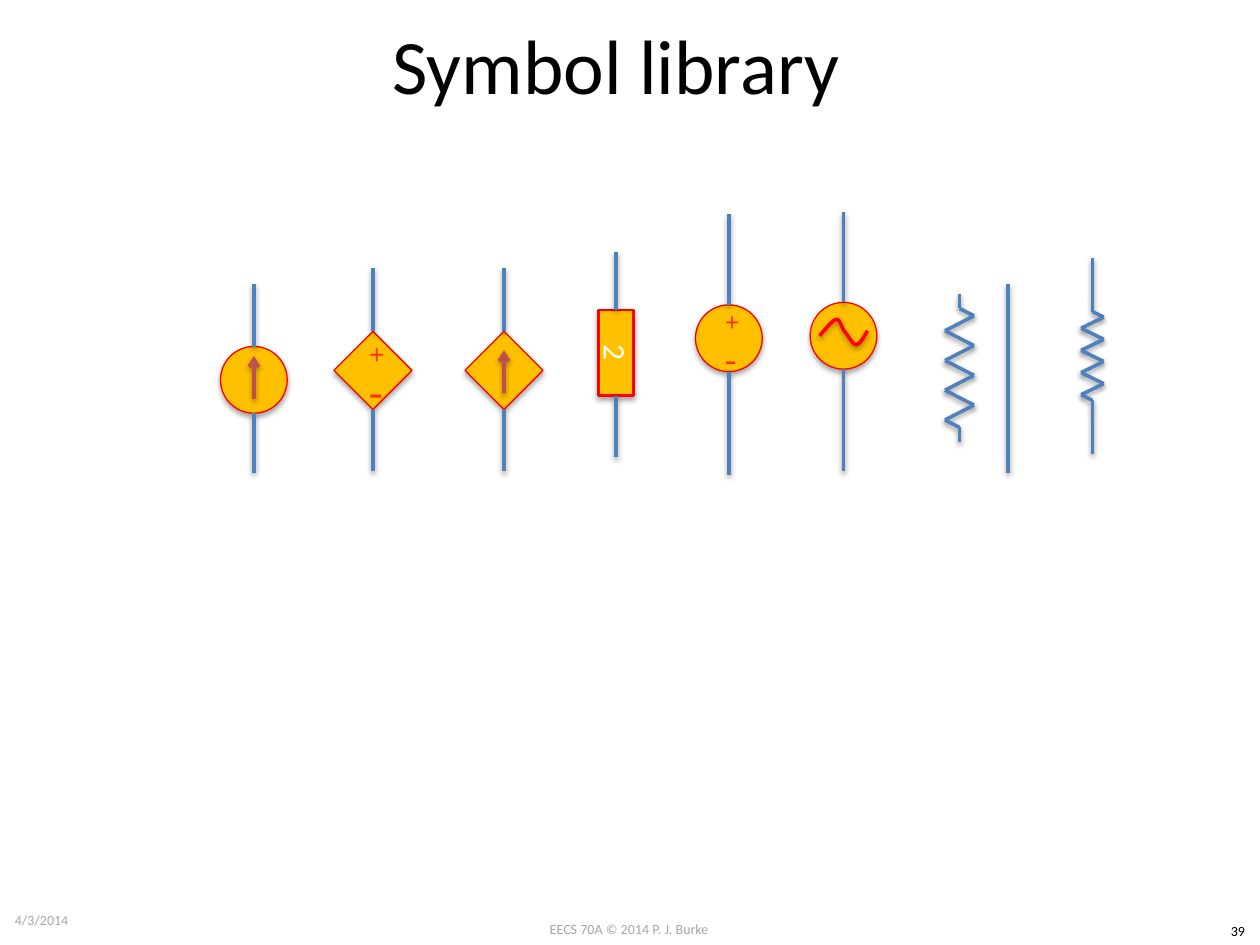
from itertools import pairwise
from math import sqrt

from lxml import etree
from pptx import Presentation
from pptx.dml.color import RGBColor
from pptx.enum import shapes, text
from pptx.oxml.ns import qn
from pptx.util import Inches, Pt

GOLD, RED, SIGN, BLUE, BRICK = "FFC000", "FF0000", "FF3300", "4F81BD", "C0504D"
BLACK, GREY, WHITE = "000000", "A6A6A6", "FFFFFF"
CENTER, LEFT = text.PP_ALIGN.CENTER, text.PP_ALIGN.LEFT
TOP, MIDDLE = text.MSO_ANCHOR.TOP, text.MSO_ANCHOR.MIDDLE


def color(value):
    """Turn a hex string into a colour."""
    return RGBColor.from_string(value)


def cast_shadow(item, distance, opacity):
    """Give a finished shape or connector a soft shadow straight below it."""
    effects = etree.SubElement(item._element.spPr, qn("a:effectLst"))
    shadow = etree.SubElement(
        effects, qn("a:outerShdw"), blurRad=str(Pt(3.1)), dist=str(Pt(distance)),
        dir="5400000", rotWithShape="0")
    tone = etree.SubElement(shadow, qn("a:srgbClr"), val=BLACK)
    etree.SubElement(tone, qn("a:alpha"), val=str(opacity * 1000))


def write(shape, words, size, ink, font="Calibri", align=CENTER, anchor=MIDDLE, bold=False):
    """Put one formatted paragraph into a shape."""
    frame = shape.text_frame
    frame.word_wrap = True
    frame.vertical_anchor = anchor
    para = frame.paragraphs[0]
    para.text, para.alignment = words, align
    para.font.name, para.font.size, para.font.bold = font, Pt(size), bold
    para.font.color.rgb = color(ink)


def label(parent, box, words, size, ink, **style):
    """Add a text box at the given box."""
    write(parent.shapes.add_textbox(*map(Inches, box)), words, size, ink, **style)


def wire(parent, start, end, ink=BLUE, joined=None, site=0):
    """Draw a straight line, optionally joined to a body at its start."""
    line = parent.shapes.add_connector(
        shapes.MSO_CONNECTOR.STRAIGHT, *map(Inches, (*start, *end)))
    if joined is not None:
        line.begin_connect(joined, site)
        line.begin_x, line.begin_y = map(Inches, start)
    line.line.color.rgb = color(ink)
    line.line.width = Pt(2)
    cast_shadow(line, 1.6, 38)
    return line


def body(parent, kind, box, rotation=0, weight=0.75):
    """Draw the gold body of a component."""
    shape = parent.shapes.add_shape(kind, *map(Inches, box))
    shape.rotation = rotation
    shape.fill.solid()
    shape.fill.fore_color.rgb = color(GOLD)
    shape.line.color.rgb = color(RED)
    shape.line.width = Pt(weight)
    cast_shadow(shape, 1.8, 35)
    return shape


def up_arrow(group, x, y):
    """Mark a current source with an arrow centred on a point."""
    arrow = wire(group, (x, y + 0.17), (x, y - 0.17), BRICK)
    etree.SubElement(arrow.line._get_or_add_ln(), qn("a:tailEnd"), type="arrow")


def polarity(group, x, y, plus_size, minus_size):
    """Mark a voltage source with plus and minus signs."""
    for sign, offset, size in (("+", -0.3, plus_size), ("-", -0.01, minus_size)):
        label(group, (x - 0.13, y + offset, 0.26, 0.33), sign, size, SIGN,
              font="Times New Roman", bold=sign == "+")


def sine_wave(group, x, y):
    """Mark an alternating source with one smooth period."""
    knots = [(-.19, 0), (-.14, -.06), (-.09, -.12), (-.06, -.13), (-.03, -.14),
             (-.02, -.07), (.01, -.03), (.04, 0), (.07, .07), (.1, .07),
             (.13, .07), (.16, .01), (.19, -.04)]
    points = [knots[0]]
    for first in range(0, len(knots) - 1, 3):
        for t in (step / 8 for step in range(1, 9)):
            weights = ((1 - t) ** 3, 3 * t * (1 - t) ** 2, 3 * t * t * (1 - t), t ** 3)
            points.append([sum(w * knot[axis] for w, knot in zip(weights, knots[first:first + 4]))
                           for axis in (0, 1)])
    points = [(Inches(x + dx), Inches(y + dy)) for dx, dy in points]
    builder = group.shapes.build_freeform(*points[0])
    builder.add_line_segments(points[1:], close=False)
    wave = builder.convert_to_shape()
    wave.fill.background()
    wave.line.color.rgb = color(RED)
    wave.line.width = Pt(2)
    cast_shadow(wave, 1.6, 38)


def source(page, box, lead, diamond=False):
    """Draw a round or diamond source with two leads; return its group and centre."""
    left, top, width, height = box
    group = page.shapes.add_group_shape()
    x, y = left + width / 2, top + lead + width / 2
    side = width / sqrt(2) if diamond else width
    kind = shapes.MSO_SHAPE.RECTANGLE if diamond else shapes.MSO_SHAPE.OVAL
    body(group, kind, (x - side / 2, y - side / 2, side, side), 45 if diamond else 0)
    wire(group, (x, y - width / 2), (x, top))
    wire(group, (x, y + width / 2), (x, top + height))
    return group, x, y


def element(page, box, words):
    """Draw a labelled element standing on end between two leads."""
    left, top, width, height = box
    group = page.shapes.add_group_shape()
    length, x, y = 0.68, left + width / 2, top + 0.8
    block = body(group, shapes.MSO_SHAPE.RECTANGLE,
                 (x - length / 2, y - width / 2, length, width), 90, 1.5)
    write(block, words, 18, WHITE)
    wire(group, (x, y + length / 2), (x, top + height), joined=block, site=3)
    wire(group, (x, y - length / 2), (x, top), joined=block, site=1)


def resistor(page, box, lead=0):
    """Draw a zigzag resistor, with extra leads if asked."""
    left, top, width, height = box
    group = page.shapes.add_group_shape()
    x, unit = left + width / 2, (height - 2 * lead) / 20
    start = top + lead
    bends = [(left + width * (turn % 2 == 0), start + unit * (3 + 2 * turn))
             for turn in range(8)]
    points = [(x, start), (x, start + 2 * unit), *bends,
              (x, start + 18 * unit), (x, start + 20 * unit)]
    if lead:
        points = [(x, top), *points, (x, top + height)]
    for begin, end in pairwise(points):
        wire(group, begin, end)


def symbols(page, left, top):
    """Place the row of circuit symbols from its top left corner."""
    def at(x, y, width, height):
        return left + x, top + y, width, height

    group, x, y = source(page, at(0, 0.57, 0.53, 1.5), 0.5)
    up_arrow(group, x, y - 0.02)
    group, x, y = source(page, at(0.9, 0.45, 0.62, 1.61), 0.5, diamond=True)
    polarity(group, x, y, 16, 24)
    group, x, y = source(page, at(1.94, 0.45, 0.62, 1.61), 0.5, diamond=True)
    up_arrow(group, x, y + 0.01)
    group, x, y = source(page, at(3.77, 0.02, 0.53, 2.07), 0.72)
    polarity(group, x, y, 14.8, 20)
    group, x, y = source(page, at(4.68, 0, 0.53, 2.06), 0.72)
    sine_wave(group, x, y)
    resistor(page, at(5.75, 0.65, 0.23, 1.18))
    element(page, at(3, 0.32, 0.28, 1.63), "2")
    wire(page, (left + 6.25, top + 2.07), (left + 6.25, top + 0.57))
    resistor(page, at(6.83, 0.37, 0.18, 1.55), 0.335)


def footer(page, left, top):
    """Place the date, course and page number along the bottom."""
    label(page, (left + 3.81, top + 0.16, 2.33, 0.24), "EECS 70A © 2014 P. J. Burke", 8, GREY,
          anchor=TOP)
    label(page, (left + 9.63, top + 0.17, 0.35, 0.24), "39", 8, BLACK, anchor=TOP)
    label(page, (left, top, 2.33, 0.4), "4/3/2014", 8, GREY, align=LEFT)


def main():
    """Build and save the slide."""
    deck = Presentation()
    deck.slide_width, deck.slide_height = Inches(10), Inches(7.5)
    page = deck.slides.add_slide(deck.slide_layouts[6])
    label(page, (0.39, -0.12, 9, 1.25), "Symbol library", 44, BLACK)
    symbols(page, 1.75, 1.68)
    footer(page, 0.02, 7.1)
    deck.save("out.pptx")


if __name__ == "__main__":
    main()
